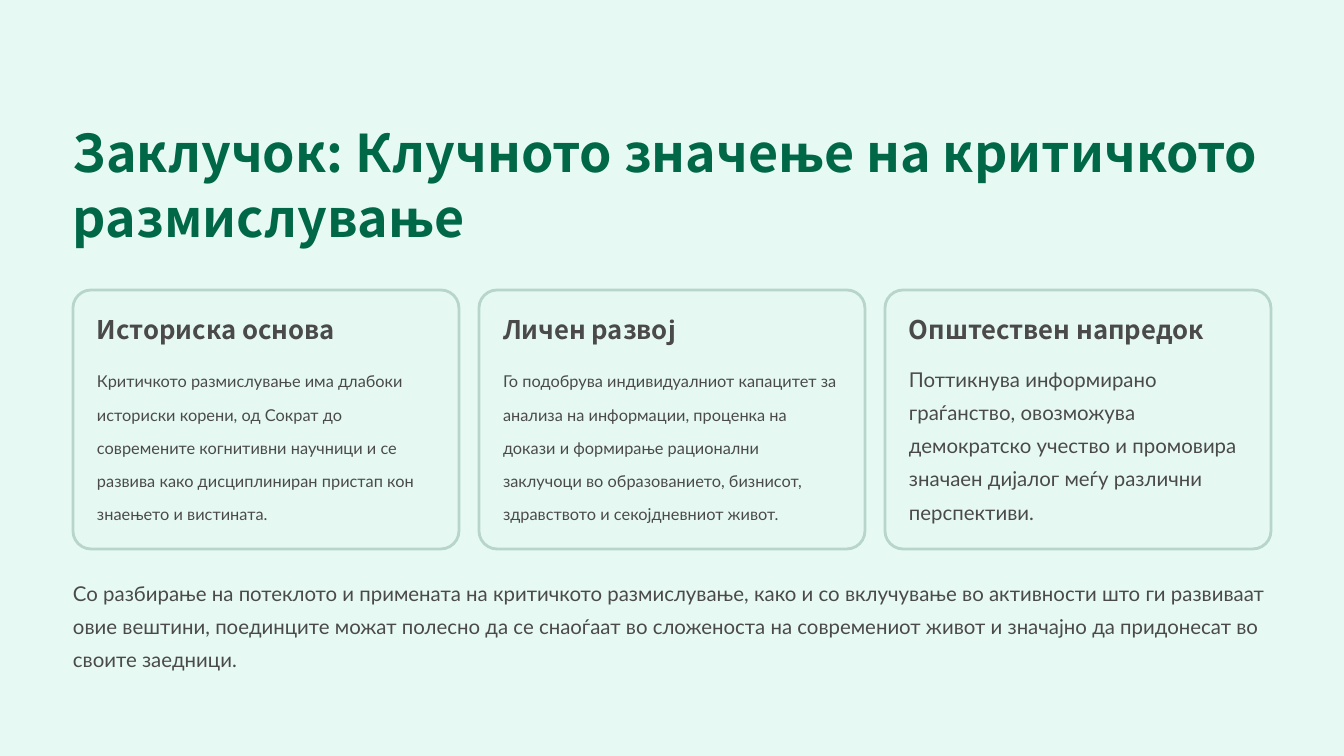
"""Build the closing slide on the key meaning of critical thinking."""
from dataclasses import dataclass
from typing import NamedTuple

from lxml.etree import SubElement
from pptx import Presentation
from pptx.dml.color import RGBColor
from pptx.enum.shapes import MSO_SHAPE
from pptx.enum.text import MSO_ANCHOR, MSO_AUTO_SIZE, PP_ALIGN
from pptx.oxml.ns import qn
from pptx.util import Emu, Pt


@dataclass(frozen=True)
class Type:
    face: str
    size: float
    lead: float
    ink: str
    bold: bool = False
    wrap: bool = True


@dataclass(frozen=True)
class Theme:
    back: str = "E6F9F3"
    fill: str = "E5F9F2"
    edge: str = "B7D5CA"
    title: Type = Type("Noto Sans CJK SC", 44.5, 55.5, "006747", True)
    head: Type = Type("Noto Sans CJK SC", 22, 27.5, "4B4A4A", True, False)
    small: Type = Type("Lato", 14, 28.5, "4B4A4A")
    text: Type = Type("Lato", 17.5, 28.5, "4B4A4A")


class Box(NamedTuple):
    left: int
    top: int
    width: int
    height: int


class Card(NamedTuple):
    head: str
    wide: int
    text: str
    type: Type
    tall: int


LOOK = Theme()
LEFT, WIDE = 73, 1198
PITCH, PAD = 406, 24
TITLE = "Заклучок: Клучното значење на критичкото размислување"
CLOSE = (
    "Со разбирање на потеклото и примената на критичкото размислување, како и со "
    "вклучување во активности што ги развиваат овие вештини, поединците можат "
    "полесно да се снаоѓаат во сложеноста на современиот живот и значајно да "
    "придонесат во своите заедници."
)
CARDS = (
    Card(
        "Историска основа", 291,
        "Критичкото размислување има длабоки историски корени, од Сократ до "
        "современите когнитивни научници и се развива како дисциплиниран пристап "
        "кон знаењето и вистината.",
        LOOK.small, 166,
    ),
    Card(
        "Личен развој", 299,
        "Го подобрува индивидуалниот капацитет за анализа на информации, проценка "
        "на докази и формирање рационални заклучоци во образованието, бизнисот, "
        "здравството и секојдневниот живот.",
        LOOK.small, 166,
    ),
    Card(
        "Општествен напредок", 260,
        "Поттикнува информирано граѓанство, овозможува демократско учество и "
        "промовира значаен дијалог меѓу различни перспективи.",
        LOOK.text, 134,
    ),
)


def px(count: int) -> Emu:
    """Turn px into EMU."""
    return Emu(round(count * 914400 / 84))


def apply(item, form: dict) -> None:
    """Set each attribute named in the format."""
    for name, value in form.items():
        setattr(item, name, value)


def write(shape, box: Box, words: str, kind: Type) -> None:
    """Place a text shape and fill it with styled words."""
    apply(shape, {name: px(value) for name, value in box._asdict().items()})
    frame = shape.text_frame
    apply(frame, {
        "margin_left": 0, "margin_top": 0, "margin_right": 0, "margin_bottom": 0,
        "auto_size": MSO_AUTO_SIZE.NONE, "word_wrap": kind.wrap,
        "vertical_anchor": MSO_ANCHOR.TOP,
    })
    para = frame.paragraphs[0]
    apply(para, {"alignment": PP_ALIGN.LEFT, "line_spacing": Pt(kind.lead)})
    run = para.add_run()
    run.text = words
    apply(run.font, {"name": kind.face, "size": Pt(kind.size), "bold": kind.bold})
    run.font.color.rgb = RGBColor.from_string(kind.ink)


def label(slide, box: Box, words: str, kind: Type) -> None:
    """Add a text box."""
    write(slide.shapes.add_textbox(*map(px, box)), box, words, kind)


def panel(slide, box: Box) -> None:
    """Add a rounded, slightly clear panel."""
    shape = slide.shapes.add_shape(MSO_SHAPE.ROUNDED_RECTANGLE, *map(px, box))
    shape.adjustments[0] = 0.07
    shape.shadow.inherit = False
    shape.fill.solid()
    shape.fill.fore_color.rgb = RGBColor.from_string(LOOK.fill)
    tint = shape.fill._xPr.find(qn("a:solidFill"))[0]
    SubElement(tint, qn("a:alpha"), val="95000")
    shape.line.color.rgb = RGBColor.from_string(LOOK.edge)
    shape.line.width = Pt(2.4)


def draw(slide, card: Card, left: int) -> None:
    """Draw one card with its heading and text."""
    panel(slide, Box(left, 290, 386, 259))
    label(slide, Box(left + PAD, 313, card.wide, 33), card.head, LOOK.head)
    label(slide, Box(left + PAD, 358, 339, card.tall), card.text, card.type)


def main() -> None:
    """Build and save the slide."""
    deck = Presentation()
    apply(deck, {"slide_width": px(1344), "slide_height": px(756)})
    slide = deck.slides.add_slide(deck.slide_layouts[5])
    back = slide.background.fill
    back.solid()
    back.fore_color.rgb = RGBColor.from_string(LOOK.back)
    write(slide.shapes.title, Box(LEFT, 118, WIDE, 130), TITLE, LOOK.title)
    for rank, card in enumerate(CARDS):
        draw(slide, card, LEFT + rank * PITCH)
    label(slide, Box(LEFT, 572, WIDE, 66), CLOSE, LOOK.text)
    deck.save("out.pptx")


if __name__ == "__main__":
    main()
